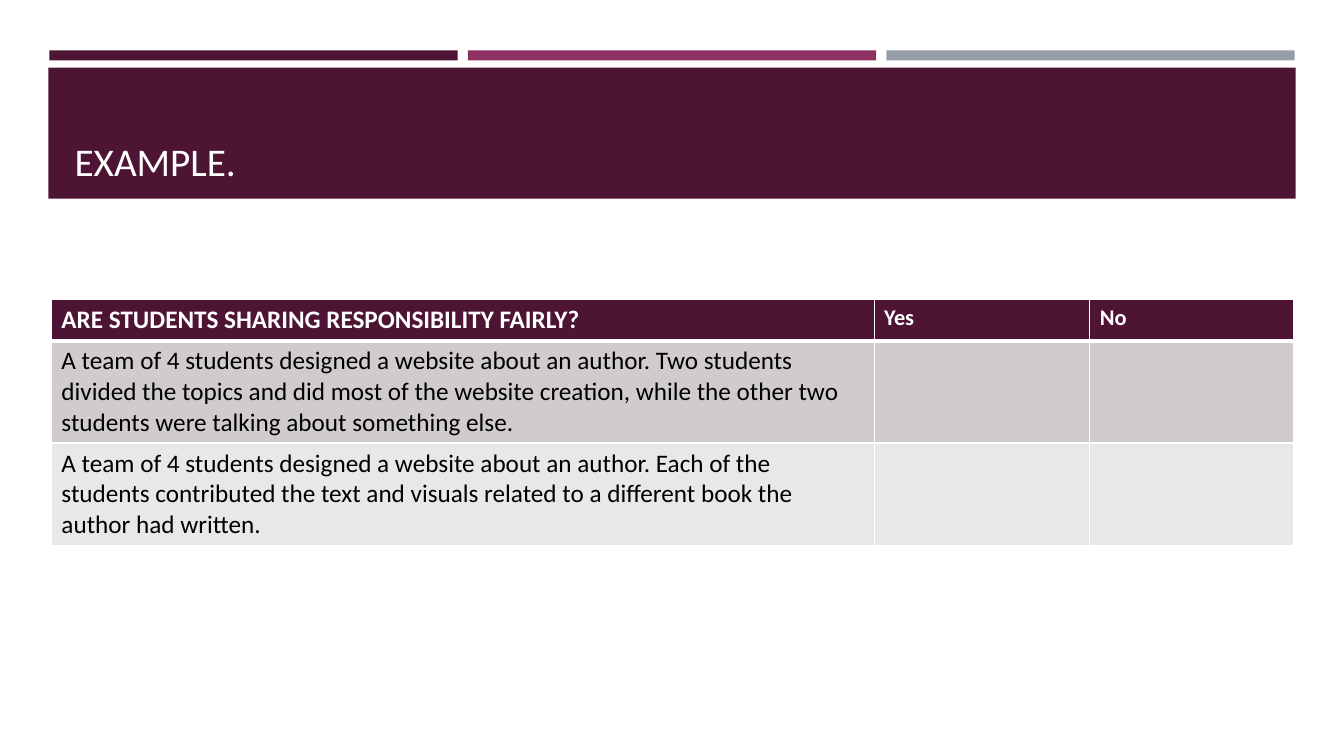
"""Build a slide with a title banner and a yes/no table about sharing responsibility."""
from dataclasses import dataclass

from lxml.etree import SubElement
from pptx import Presentation
from pptx.dml.color import RGBColor
from pptx.enum.shapes import MSO_SHAPE as Preset
from pptx.enum.text import MSO_ANCHOR as Anchor, PP_ALIGN as Align
from pptx.oxml.ns import qn
from pptx.util import Emu, Pt

PX = 9144
PLUM, MAGENTA, GRAY, WHITE, BLACK = "4D1434", "903163", "969FA7", "FFFFFF", "000000"
FONT = "Calibri"


@dataclass
class Bar:
    left: int
    top: int
    width: int
    height: int
    color: str


@dataclass
class Row:
    texts: tuple
    sizes: tuple
    height: int
    fill: str
    color: str
    bold: bool
    top_line: int
    bottom_line: int


STRIPES = [Bar(49 + 415 * i, 50, 405, 10, color)
           for i, color in enumerate((PLUM, MAGENTA, GRAY))]
BANNER = Bar(48, 67, 1237, 130, PLUM)
COLUMNS = (816, 214, 202)
ROWS = [
    Row(("ARE STUDENTS SHARING RESPONSIBILITY FAIRLY?", "Yes", "No"),
        (18, 16, 16), 41, PLUM, WHITE, True, 1, 3),
    Row(("A team of 4 students designed a website about an author. Two students divided "
         "the topics and did most of the website creation, while the other two students "
         "were talking about something else.", "", ""),
        (18, 18, 18), 100, "D0CCCE", BLACK, False, 3, 1),
    Row(("A team of 4 students designed a website about an author. Each of the students "
         "contributed the text and visuals related to a different book the author had "
         "written.", "", ""),
        (18, 18, 18), 100, "E9E7E8", BLACK, False, 1, 1),
]


def px(length: int) -> Emu:
    """Turn px into EMU."""
    return Emu(length * PX)


def paint(target, color: str) -> None:
    """Give a fill a solid colour."""
    target.solid()
    target.fore_color.rgb = RGBColor.from_string(color)


def style(paragraph, size: int, color: str, bold: bool = False) -> None:
    """Set the font of a paragraph."""
    font = paragraph.font
    font.name, font.size, font.bold = FONT, Pt(size), bold
    font.color.rgb = RGBColor.from_string(color)


def draw_bar(slide, bar: Bar) -> None:
    """Draw one plain rectangle."""
    shape = slide.shapes.add_shape(
        Preset.RECTANGLE, px(bar.left), px(bar.top), px(bar.width), px(bar.height))
    shape.shadow.inherit = False
    paint(shape.fill, bar.color)
    shape.line.fill.background()


def draw_title(slide, text: str) -> None:
    """Place the title in front of the banner."""
    title = slide.shapes.title
    title.left, title.top, title.width, title.height = map(px, (64, 77, 1206, 111))
    title.text_frame.text = text
    title.text_frame.vertical_anchor = Anchor.BOTTOM
    paragraph = title.text_frame.paragraphs[0]
    paragraph.alignment = Align.LEFT
    style(paragraph, 28, WHITE)
    slide.shapes.element.append(title.element)


def draw_borders(cell, row: Row) -> None:
    """Draw the white lines around a cell."""
    properties = cell._tc.get_or_add_tcPr()
    widths = {"lnL": 1, "lnR": 1, "lnT": row.top_line, "lnB": row.bottom_line}
    for side, width in widths.items():
        line = SubElement(properties, qn(f"a:{side}"), w=str(Pt(width)))
        fill = SubElement(line, qn("a:solidFill"))
        SubElement(fill, qn("a:srgbClr"), val=WHITE)


def draw_table(slide) -> None:
    """Draw the question table."""
    table = slide.shapes.add_table(
        len(ROWS), len(COLUMNS), px(51), px(297), px(sum(COLUMNS)),
        px(sum(row.height for row in ROWS))).table
    for column, width in zip(table.columns, COLUMNS):
        column.width = px(width)
    for r, row in enumerate(ROWS):
        table.rows[r].height = px(row.height)
        for c, (text, size) in enumerate(zip(row.texts, row.sizes)):
            cell = table.cell(r, c)
            cell.text = text
            style(cell.text_frame.paragraphs[0], size, row.color, row.bold)
            draw_borders(cell, row)
            paint(cell.fill, row.fill)


def main() -> None:
    """Build and save the slide."""
    deck = Presentation()
    deck.slide_width, deck.slide_height = px(1333), px(750)
    slide = deck.slides.add_slide(deck.slide_layouts.get_by_name("Title Only"))
    for bar in [*STRIPES, BANNER]:
        draw_bar(slide, bar)
    draw_title(slide, "EXAMPLE.")
    draw_table(slide)
    deck.save("out.pptx")


if __name__ == "__main__":
    main()
